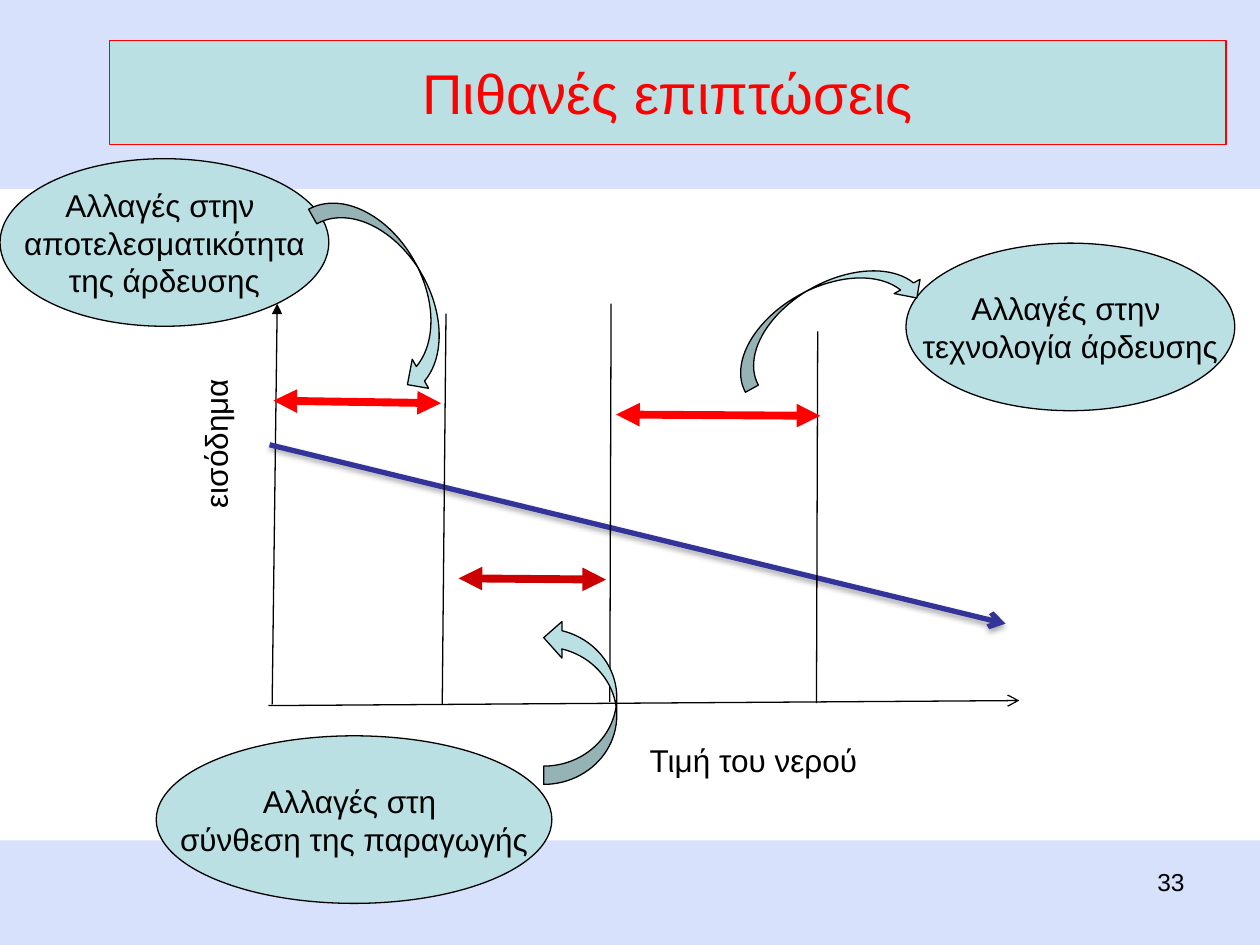
from lxml.etree import SubElement
from pptx import Presentation
from pptx.dml.color import RGBColor
from pptx.enum.shapes import MSO_CONNECTOR, MSO_SHAPE
from pptx.enum.text import MSO_ANCHOR, PP_ALIGN
from pptx.oxml import parse_xml
from pptx.oxml.ns import nsdecls, qn
from pptx.util import Inches, Pt

LAVENDER = RGBColor(0xD8, 0xE1, 0xFC)
WHITE = RGBColor(0xFF, 0xFF, 0xFF)
BLACK = RGBColor(0, 0, 0)
AQUA = RGBColor(0xBB, 0xE0, 0xE3)
RED = RGBColor(0xFF, 0, 0)
DARK_RED = RGBColor(0xCC, 0, 0)
NAVY = RGBColor(0x33, 0x33, 0x99)

SOFT_SHADOW = (
    f'<a:effectLst {nsdecls("a")}>'
    '<a:outerShdw blurRad="39370" dist="22860" dir="5400000" rotWithShape="0">'
    '<a:srgbClr val="000000"><a:alpha val="35000"/></a:srgbClr>'
    '</a:outerShdw></a:effectLst>'
)
NO_EFFECT = f'<a:effectLst {nsdecls("a")}/>'


def write(frame, lines, size, color=BLACK, align=PP_ALIGN.CENTER,
          anchor=MSO_ANCHOR.TOP, wrap=False):
    frame.word_wrap = wrap
    frame.vertical_anchor = anchor
    for number, line in enumerate(lines):
        paragraph = frame.add_paragraph() if number else frame.paragraphs[0]
        paragraph.alignment = align
        run = paragraph.add_run()
        run.text = line
        run.font.name = "Arial"
        run.font.size = Pt(size)
        run.font.color.rgb = color


def paint(shape, fill, outline):
    shape.fill.solid()
    shape.fill.fore_color.rgb = fill
    if outline is None:
        shape.line.fill.background()
    else:
        shape.line.color.rgb = outline
        shape.line.width = Pt(0.75)


def add_figure(slide, kind, box, fill=AQUA, outline=BLACK, rotation=0):
    figure = slide.shapes.add_shape(kind, *map(Inches, box))
    figure.shadow.inherit = False
    figure.rotation = rotation
    paint(figure, fill, outline)
    return figure


def add_bubble(slide, box, lines):
    bubble = add_figure(slide, MSO_SHAPE.OVAL, box)
    write(bubble.text_frame, lines, 18, anchor=MSO_ANCHOR.MIDDLE)


def add_label(slide, box, text, size=18, rotation=0, **style):
    label = slide.shapes.add_textbox(*map(Inches, box))
    label.rotation = rotation
    write(label.text_frame, [text], size, **style)


def add_line(slide, start, end, color=BLACK, width=0.75, head=None, tail=None,
             effect=NO_EFFECT):
    line = slide.shapes.add_connector(
        MSO_CONNECTOR.STRAIGHT, *map(Inches, (*start, *end)))
    line.line.color.rgb = color
    line.line.width = Pt(width)
    outline = line.line._get_or_add_ln()
    for tag, arrow in (("a:headEnd", head), ("a:tailEnd", tail)):
        if arrow:
            SubElement(outline, qn(tag), type=arrow)
    line._element.spPr.append(parse_xml(effect))


def add_title(slide, text):
    title = slide.shapes.title
    title.left, title.top, title.width, title.height = map(
        Inches, (0.87, 0.32, 8.86, 0.83))
    # Rounded outline for the title placeholder
    title._element.spPr.append(parse_xml(
        f'<a:prstGeom {nsdecls("a")} prst="roundRect"><a:avLst/></a:prstGeom>'))
    paint(title, AQUA, RED)
    write(title.text_frame, [text], 32, RED, anchor=MSO_ANCHOR.MIDDLE)


def main():
    deck = Presentation()
    deck.slide_width, deck.slide_height = Inches(10), Inches(7.5)
    slide = deck.slides.add_slide(deck.slide_layouts[5])

    # Background, title and page number
    slide.background.fill.solid()
    slide.background.fill.fore_color.rgb = LAVENDER
    add_figure(slide, MSO_SHAPE.RECTANGLE, (0, 1.5, 10, 5.17), WHITE, None)
    add_title(slide, "Πιθανές επιπτώσεις")
    add_label(slide, (7.17, 6.83, 2.33, 0.52), "33", 14,
              align=PP_ALIGN.RIGHT, wrap=True)

    # Axes and their names
    add_line(slide, (2.2, 2.41), (2.16, 5.59), head="triangle")
    add_line(slide, (2.13, 5.6), (8.09, 5.56), tail="arrow")
    add_label(slide, (5.05, 5.83, 1.86, 0.4), "Τιμή του νερού")
    add_label(slide, (1.09, 3.32, 1.24, 0.4), "εισόδημα", rotation=270)

    # Falling income
    add_line(slide, (2.14, 3.53), (7.98, 4.95), NAVY, 3, tail="arrow",
             effect=SOFT_SHADOW)

    # Borders between the price ranges
    for top, bottom in (((3.54, 2.49), (3.51, 5.59)),
                        ((4.85, 2.41), (4.84, 5.57)),
                        ((6.49, 2.63), (6.48, 5.58))):
        add_line(slide, top, bottom)

    # Price ranges
    for start, end, color in (((2.17, 3.18), (3.5, 3.2), RED),
                              ((3.64, 4.59), (4.81, 4.6), DARK_RED),
                              ((4.89, 3.29), (6.51, 3.3), RED)):
        add_line(slide, start, end, color, 4.5, "triangle", "triangle")

    # Responses, each with its curved arrow
    add_bubble(slide, (7.19, 1.93, 2.61, 1.33),
               ["Αλλαγές στην ", "τεχνολογία άρδευσης"])
    add_figure(slide, MSO_SHAPE.CURVED_DOWN_ARROW, (5.7, 2.27, 1.67, 0.47),
               rotation=331.2)
    add_bubble(slide, (1.24, 5.84, 3.14, 1.33),
               ["Αλλαγές στη ", "σύνθεση της παραγωγής"])
    add_figure(slide, MSO_SHAPE.CURVED_UP_ARROW, (3.95, 5.28, 1.31, 0.58),
               rotation=270)
    add_bubble(slide, (0, 1.26, 2.61, 1.33),
               ["Αλλαγές στην ", "αποτελεσματικότητα", "της άρδευσης"])
    add_figure(slide, MSO_SHAPE.CURVED_LEFT_ARROW, (2.84, 1.42, 0.53, 1.73),
               rotation=330.6)

    deck.save("out.pptx")


if __name__ == "__main__":
    main()
